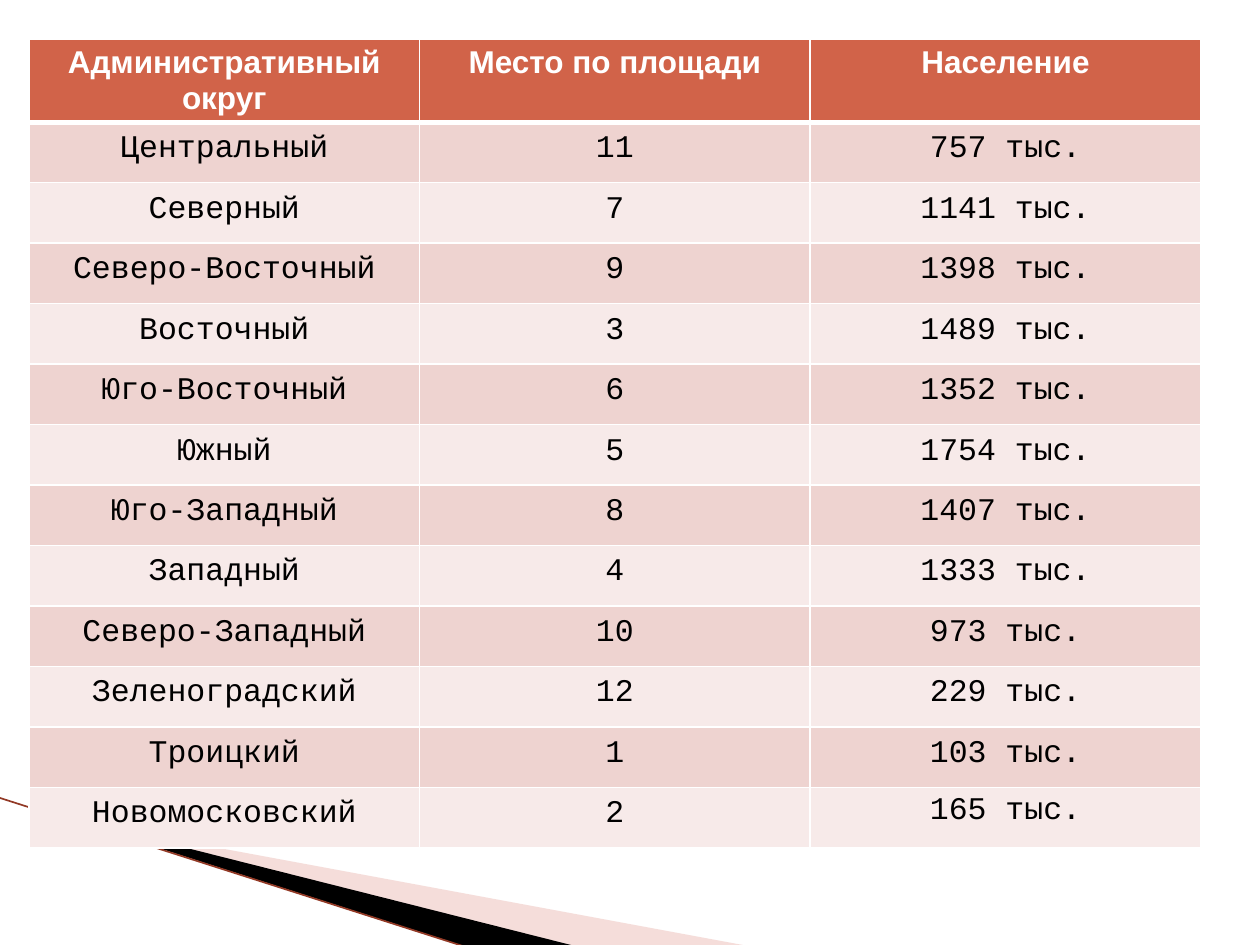
from lxml import etree
from pptx import Presentation
from pptx.dml.color import RGBColor
from pptx.enum.shapes import MSO_CONNECTOR
from pptx.enum.text import MSO_ANCHOR, PP_ALIGN
from pptx.oxml.ns import qn
from pptx.util import Inches, Pt

STRAIGHT = MSO_CONNECTOR.STRAIGHT
MIDDLE = MSO_ANCHOR.MIDDLE
CENTER = PP_ALIGN.CENTER

WHITE = RGBColor(0xFF, 0xFF, 0xFF)
BLACK = RGBColor(0x00, 0x00, 0x00)
TERRACOTTA = RGBColor(0xD1, 0x63, 0x49)
BAND_DARK = RGBColor(0xEE, 0xD3, 0xD0)
BAND_LIGHT = RGBColor(0xF7, 0xEA, 0xE9)
PALE_RED = RGBColor(0xE7, 0xAC, 0xA4)
EDGE_RED = RGBColor(0x92, 0x39, 0x25)

HEADINGS = ("Административный округ", "Место по площади", "Население")
DISTRICTS = (
    ("Центральный", 11, 757),
    ("Северный", 7, 1141),
    ("Северо-Восточный", 9, 1398),
    ("Восточный", 3, 1489),
    ("Юго-Восточный", 6, 1352),
    ("Южный", 5, 1754),
    ("Юго-Западный", 8, 1407),
    ("Западный", 4, 1333),
    ("Северо-Западный", 10, 973),
    ("Зеленоградский", 12, 229),
    ("Троицкий", 1, 103),
    ("Новомосковский", 2, 165),
)


def add_wedge(slide, left, top, offsets, color, opacity=None):
    corners = [(left + Inches(x), top + Inches(y)) for x, y in offsets]
    builder = slide.shapes.build_freeform(*corners[0])
    builder.add_line_segments(corners[1:], close=True)
    wedge = builder.convert_to_shape()
    wedge.shadow.inherit = False
    wedge.line.fill.background()
    wedge.fill.solid()
    wedge.fill.fore_color.rgb = color
    if opacity is not None:
        fill_color = wedge.fill._xPr.find(qn("a:solidFill"))[0]
        etree.SubElement(fill_color, qn("a:alpha"), val=str(opacity * 1000))


def add_corner_stripes(slide, left, top, width, height):
    add_wedge(slide, left + Inches(0.56), top + Inches(0.17),
              [(0, 0.01), (5.4, 1.01), (4.01, 1.01), (0, 0)], PALE_RED, 40)
    add_wedge(slide, left + Inches(0.54), top + Inches(0.16),
              [(0, 0), (4.04, 1.02), (3.19, 1.03), (0.01, 0.01)], BLACK)
    edge = slide.shapes.add_connector(STRAIGHT, left, top, left + width, top + height)
    edge.line.color.rgb = EDGE_RED
    edge.line.width = Pt(0.95)
    etree.SubElement(edge._element.spPr, qn("a:effectLst"))


def set_borders(cell, top=1, bottom=1):
    properties = cell._tc.get_or_add_tcPr()
    widths = {"a:lnL": 1, "a:lnR": 1, "a:lnT": top, "a:lnB": bottom}
    for position, (tag, points) in enumerate(widths.items()):
        border = etree.Element(qn(tag), w=str(Pt(points)))
        fill = etree.SubElement(border, qn("a:solidFill"))
        etree.SubElement(fill, qn("a:srgbClr"), val=str(WHITE))
        properties.insert(position, border)


def fill_cell(cell, text, background, color, font_name, bold):
    cell.fill.solid()
    cell.fill.fore_color.rgb = background
    cell.text = text
    paragraph = cell.text_frame.paragraphs[0]
    paragraph.alignment = CENTER
    paragraph.font.name = font_name
    paragraph.font.size = Pt(18)
    paragraph.font.bold = bold
    paragraph.font.color.rgb = color


def tighten(cell):
    cell.vertical_anchor = MIDDLE
    cell.margin_left = cell.margin_right = Inches(0.03)
    cell.margin_top = cell.margin_bottom = Inches(0.01)
    cell.text_frame.paragraphs[0].line_spacing = Pt(16.8)


def add_district_table(slide, left, top, width, height):
    frame = slide.shapes.add_table(len(DISTRICTS) + 1, len(HEADINGS),
                                   left, top, width, height)
    table = frame.table
    for row in table.rows:
        row.height = Inches(0.48)
    frame.height = height

    for column, heading in enumerate(HEADINGS):
        cell = table.cell(0, column)
        fill_cell(cell, heading, TERRACOTTA, WHITE, "Arial", True)
        set_borders(cell, bottom=3)

    for row, (district, area_rank, population) in enumerate(DISTRICTS, start=1):
        band = BAND_DARK if row % 2 else BAND_LIGHT
        for column, text in enumerate((district, str(area_rank), f"{population} тыс.")):
            cell = table.cell(row, column)
            fill_cell(cell, text, band, BLACK, "Courier New", False)
            set_borders(cell, top=3 if row == 1 else 1)
            if (row, column) != (len(DISTRICTS), len(HEADINGS) - 1):
                tighten(cell)


def main():
    presentation = Presentation()
    presentation.slide_width = Inches(10)
    presentation.slide_height = Inches(7.5)
    slide = presentation.slides.add_slide(presentation.slide_layouts[6])
    add_corner_stripes(slide, Inches(-0.01), Inches(6.33), Inches(3.72), Inches(1.19))
    add_district_table(slide, Inches(0.23), Inches(0.31), Inches(9.3), Inches(6.7))
    presentation.save("out.pptx")


if __name__ == "__main__":
    main()
